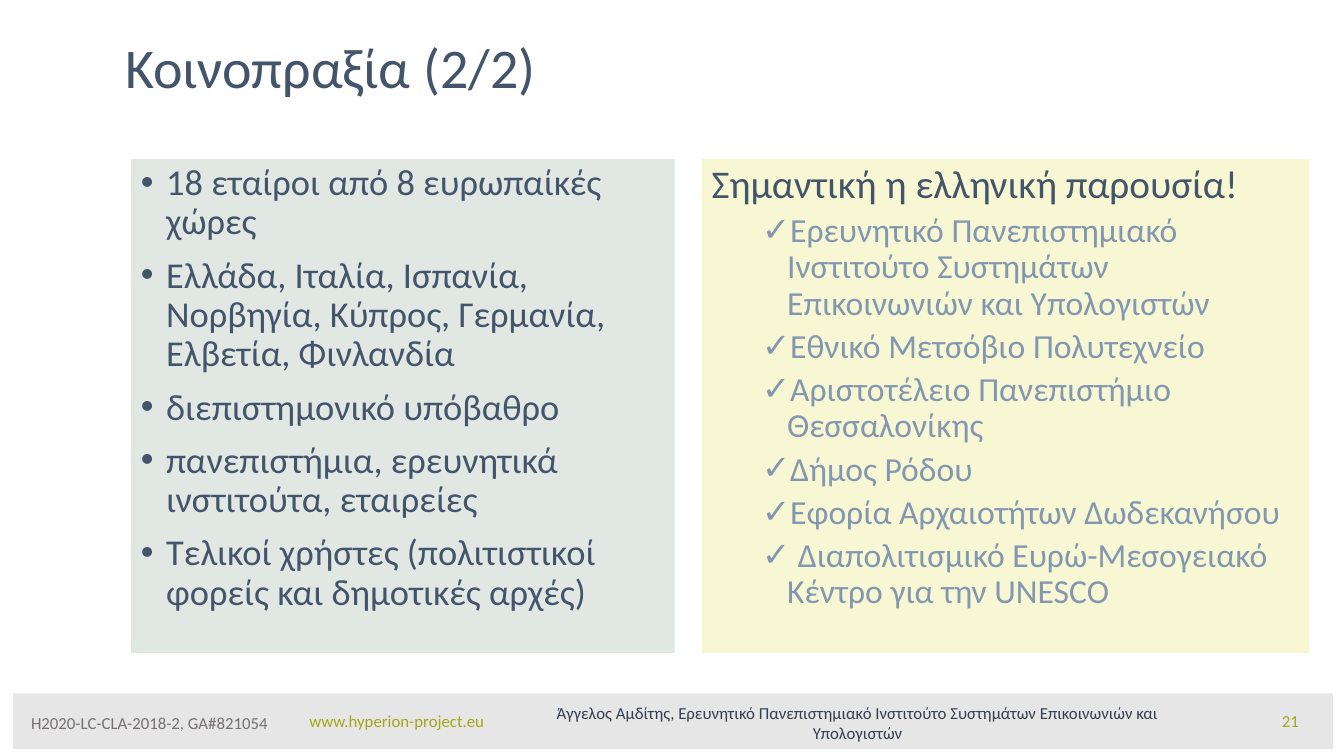
from lxml import etree
from pptx import Presentation
from pptx.dml.color import RGBColor
from pptx.enum import shapes, text
from pptx.oxml import ns
from pptx.util import Inches, Pt

# Content
TITLE = "Κοινοπραξία (2/2)"
CONSORTIUM = [
    "18 εταίροι από 8 ευρωπαίκές χώρες",
    "Ελλάδα, Ιταλία, Ισπανία, Νορβηγία, Κύπρος, Γερμανία, Ελβετία, Φινλανδία",
    "διεπιστημονικό υπόβαθρο",
    "πανεπιστήμια, ερευνητικά ινστιτούτα, εταιρείες",
    "Τελικοί χρήστες (πολιτιστικοί φορείς και δημοτικές αρχές)",
]
GREEK_HEADING = "Σημαντική η ελληνική παρουσία!"
GREEK_PARTNERS = [
    "Ερευνητικό Πανεπιστημιακό Ινστιτούτο Συστημάτων Επικοινωνιών και Υπολογιστών",
    "Εθνικό Μετσόβιο Πολυτεχνείο",
    "Αριστοτέλειο Πανεπιστήμιο Θεσσαλονίκης",
    "Δήμος Ρόδου",
    "Εφορία Αρχαιοτήτων Δωδεκανήσου",
    " Διαπολιτισμικό Ευρώ-Μεσογειακό Κέντρο για την UNESCO",
]
LEFT, CENTER, RIGHT = text.PP_ALIGN.LEFT, text.PP_ALIGN.CENTER, text.PP_ALIGN.RIGHT
TOP, MIDDLE = text.MSO_ANCHOR.TOP, text.MSO_ANCHOR.MIDDLE
# text, (left, top, width, height), colour, alignment, anchor
FOOTER = [
    ("H2020-LC-CLA-2018-2, GA#821054", (0.21, 7.02, 2.67, 0.3), "grey", LEFT, TOP),
    ("www.hyperion-project.eu", (2.97, 7, 2.09, 0.3), "olive", LEFT, TOP),
    ("Άγγελος Αμδίτης, Ερευνητικό Πανεπιστημιακό Ινστιτούτο Συστημάτων "
     "Επικοινωνιών και Υπολογιστών", (5.07, 6.95, 6.87, 0.44), "dark", CENTER, MIDDLE),
    ("21", (12.08, 6.95, 0.9, 0.4), "olive", RIGHT, MIDDLE),
]

THEME = {
    "font": "Calibri",
    "colors": {"slate": "44546A", "steel": "8497B0", "grey": "767171",
               "olive": "A1A719", "dark": "333F50", "bar": "E7E6E6",
               "sage": "E1E8E4", "cream": "F7F8D3"},
    "sizes": {"title": 40, "heading": 28, "bullet": 26, "partner": 24, "footer": 12},
}
PANEL_TOP, PANEL_HEIGHT = 1.58, 4.9

prs = Presentation()
prs.slide_width, prs.slide_height = Inches(13.33), Inches(7.5)
slide = prs.slides.add_slide(prs.slide_layouts[6])


def color(name):
    return RGBColor.from_string(THEME["colors"][name])


def add_block(box, fill):
    block = slide.shapes.add_shape(shapes.MSO_SHAPE.RECTANGLE, *map(Inches, box))
    block.shadow.inherit = False
    block.fill.solid()
    block.fill.fore_color.rgb = color(fill)
    block.line.fill.background()
    return block


def style(paragraph, wording, size, ink, align=LEFT):
    paragraph.text = wording
    paragraph.alignment = align
    paragraph.font.name = THEME["font"]
    paragraph.font.size = Pt(THEME["sizes"][size])
    paragraph.font.color.rgb = color(ink)


def add_label(wording, box, size, ink, align, anchor):
    frame = slide.shapes.add_textbox(*map(Inches, box)).text_frame
    frame.word_wrap = True
    frame.vertical_anchor = anchor
    style(frame.paragraphs[0], wording, size, ink, align)
    return frame


def add_panel(left, width, fill, lines):
    """Each line is (wording, size, colour, bullet, margin, space before)."""
    frame = add_block((left, PANEL_TOP, width, PANEL_HEIGHT), fill).text_frame
    frame.word_wrap = True
    frame.vertical_anchor = TOP
    for index, (wording, size, ink, bullet, margin, before) in enumerate(lines):
        paragraph = frame.paragraphs[0] if index == 0 else frame.add_paragraph()
        if bullet:
            props = paragraph._p.get_or_add_pPr()
            props.set("marL", str(Inches(margin)))
            props.set("indent", str(Inches(-0.25)))
            etree.SubElement(props, ns.qn("a:buFont"), typeface="Arial")
            etree.SubElement(props, ns.qn("a:buChar"), char=bullet)
        paragraph.line_spacing = 0.9
        paragraph.space_before = Pt(before if index else 0)
        style(paragraph, wording, size, ink)


# Footer bar and its labels
add_block((0.13, 6.88, 13.09, 0.55), "bar")
for wording, box, ink, align, anchor in FOOTER:
    add_label(wording, box, "footer", ink, align, anchor)

# Title
title = add_label(TITLE, (1.15, 0.16, 11.63, 1.08), "title", "slate", LEFT, MIDDLE)
title.paragraphs[0].line_spacing = 0.9

# Two panels
add_panel(1.3, 5.39, "sage",
          [(line, "bullet", "slate", "•", 0.25, 10) for line in CONSORTIUM])
add_panel(6.96, 6.03, "cream",
          [(GREEK_HEADING, "heading", "slate", None, 0, 0)]
          + [(line, "partner", "steel", "✓", 0.75, 5) for line in GREEK_PARTNERS])

prs.save("out.pptx")
